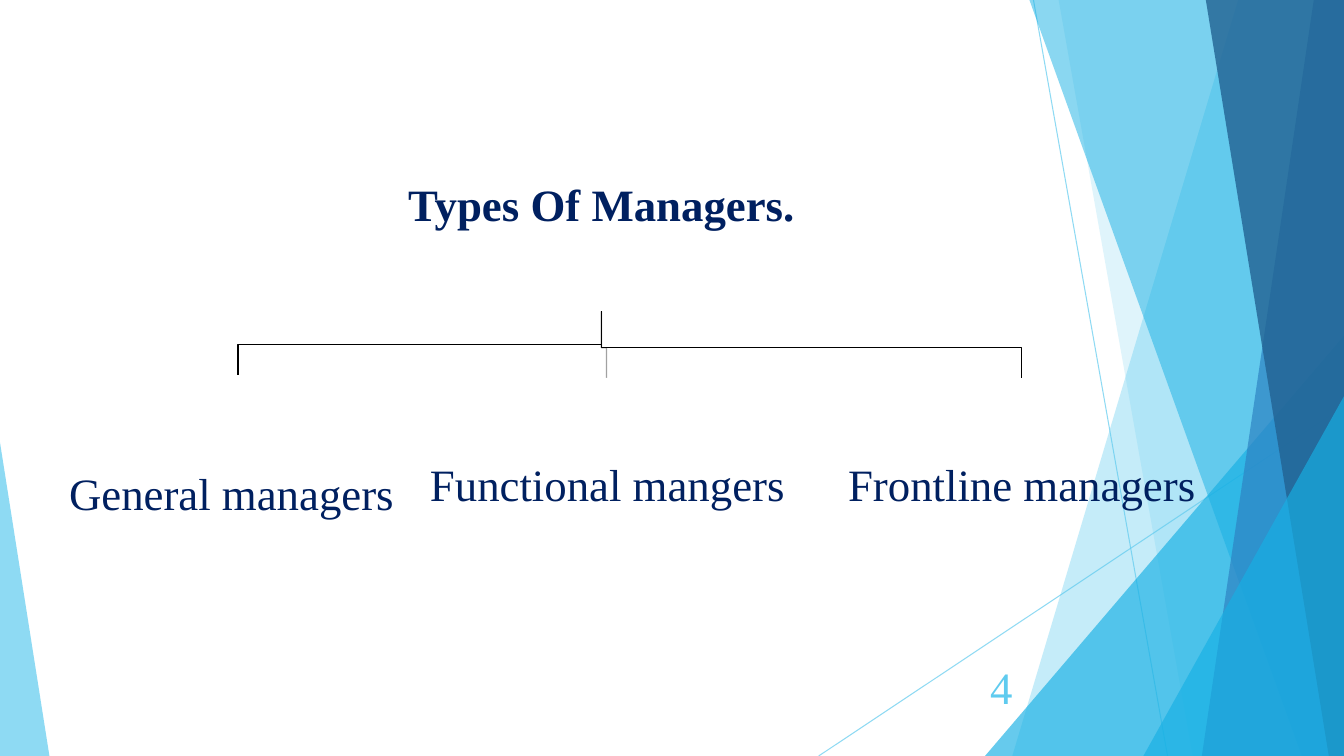
from pptx import Presentation
from pptx.dml.color import RGBColor
from pptx.enum.shapes import MSO_CONNECTOR as Conn, MSO_SHAPE as Shape
from pptx.enum.text import MSO_ANCHOR as Anchor, MSO_AUTO_SIZE as Fit, PP_ALIGN as Align
from pptx.oxml.ns import qn
from pptx.util import Inches, Pt
from lxml.etree import SubElement

WIDE, HIGH = 13.33, 7.5
NAVY, SKY, CYAN = "002060", "5FCBEF", "17B0E4"


def paint(form, hue, alpha=100):
    """Give a fill or line format a solid colour with an opacity."""
    form.solid()
    form.fore_color.rgb = RGBColor.from_string(hue)
    if alpha < 100:
        node = form._xPr.find(qn("a:solidFill"))[0]
        SubElement(node, qn("a:alpha")).set("val", str(alpha * 1000))


def write(shape, text, size=32, hue=NAVY, bold=False, align=Align.CENTER,
          anchor=Anchor.MIDDLE, inset=0.02, top=0.02, space=0.9, dot=0):
    """Set the text of a shape and its format."""
    frame = shape.text_frame
    frame.word_wrap, frame.auto_size = True, Fit.NONE
    frame.vertical_anchor = anchor
    frame.margin_left = frame.margin_right = Inches(inset)
    frame.margin_top, frame.margin_bottom = Inches(top), Inches(0.02)
    para = frame.paragraphs[0]
    para.alignment, para.line_spacing = align, space
    para.space_before = Pt(0)
    parts = [(text, size)] + ([(".", dot)] if dot else [])
    for words, points in parts:
        run = para.add_run()
        run.text = words
        font = run.font
        font.name, font.size, font.bold = "Times New Roman", Pt(points), bold
        font.color.rgb = RGBColor.from_string(hue)


def place(shape, left, top, width, height):
    """Move a shape to a box given in inches."""
    shape.left, shape.top = Inches(left), Inches(top)
    shape.width, shape.height = Inches(width), Inches(height)


def trace(slide, points, close):
    """Draw an outline through points given in inches."""
    spots = [(Inches(x), Inches(y)) for x, y in points]
    pen = slide.shapes.build_freeform(*spots[0])
    pen.add_line_segments(spots[1:], close=close)
    shape = pen.convert_to_shape()
    shape.shadow.inherit = False
    return shape


def facet(slide, head, foot, hue, alpha):
    """Draw a full-height panel from a slanted edge to the right side."""
    panel = trace(slide, [(head, 0), (WIDE, 0), (WIDE, HIGH), (foot, HIGH)], True)
    paint(panel.fill, hue, alpha)
    panel.line.fill.background()


def wedge(slide, left, top, width, tip, hue, alpha):
    """Draw a right triangle standing on the foot of the slide."""
    shape = slide.shapes.add_shape(
        Shape.ISOSCELES_TRIANGLE, Inches(left), Inches(top),
        Inches(width), Inches(HIGH - top))
    shape.adjustments[0] = tip
    shape.shadow.inherit = False
    paint(shape.fill, hue, alpha)
    shape.line.fill.background()


def ray(slide, *ends):
    """Draw a thin line of the backdrop."""
    line = slide.shapes.add_connector(Conn.STRAIGHT, *map(Inches, ends))
    paint(line.line.fill, SKY, 70)
    line.line.width = Pt(0.75)
    SubElement(line._element.spPr, qn("a:effectLst"))


def backdrop(slide):
    """Draw the facets around the slide."""
    ray(slide, 10.25, 0, 11.58, HIGH)
    ray(slide, WIDE, 4.03, 8.12, HIGH)
    facet(slide, 12.28, 10.04, SKY, 36)
    facet(slide, 10.5, 11.83, SKY, 20)
    wedge(slide, 9.77, 3.33, 3.56, 1, CYAN, 66)
    facet(slide, 10.21, 12.91, CYAN, 50)
    facet(slide, 13.03, 11.92, "2E83C3", 70)
    facet(slide, 11.96, 13.18, "226292", 80)
    wedge(slide, 11.34, 3.93, 1.99, 1, CYAN, 66)
    wedge(slide, 0, 4.39, 0.49, 0, SKY, 70)


def branch(slide, start, bend, end, alpha=100):
    """Draw a stepped line from the root down to one kind."""
    (x, y), (to, low) = start, end
    line = trace(slide, [(x, y), (x, bend), (to, bend), (to, low)], False)
    line.fill.background()
    paint(line.line.fill, "000000", alpha)
    line.line.width = Pt(1)


def kind(slide, text, box, fill=None, **form):
    """Add the box of one kind of manager."""
    shape = slide.shapes.add_shape(Shape.RECTANGLE, 0, 0, 0, 0)
    place(shape, *box)
    shape.shadow.inherit = False
    shape.line.fill.background()
    if fill:
        paint(shape.fill, fill)
    else:
        shape.fill.background()
    write(shape, text, **form)


def tree(slide, left, top, width, height):
    """Draw the title and the three kinds below it."""
    title = slide.shapes.title
    place(title, left, top, width, height)
    write(title, "Types Of Managers.", bold=True, anchor=Anchor.TOP, top=0.15)
    mid, low = left + width / 2, top + height
    root = (mid, low - 0.01)
    branch(slide, root, low + 0.35, (10.13, low + 0.65))
    branch(slide, root, low + 0.35, (mid + 0.05, low + 0.65), 36)
    branch(slide, root, low + 0.32, (2.36, low + 0.62))
    kind(slide, "General managers", (0.54, low + 0.62, 3.64, 2.36), dot=36)
    kind(slide, "Functional mangers", (3.93, low + 0.65, 4.19, 2.17), "FFFFFF")
    kind(slide, "Frontline managers", (8.31, low + 0.65, 3.65, 2.1), space=1)


def number(slide, *box):
    """Add the slide number."""
    shape = slide.shapes.add_textbox(*map(Inches, box))
    write(shape, "4", hue=SKY, align=Align.RIGHT, inset=0.1, space=1)


def main():
    """Build and save the slide."""
    deck = Presentation()
    deck.slide_width, deck.slide_height = Inches(WIDE), Inches(HIGH)
    slide = deck.slides.add_slide(deck.slide_layouts[5])
    backdrop(slide)
    tree(slide, 2.66, 1.66, 6.61, 1.44)
    number(slide, 9.39, 6.61, 0.75, 0.4)
    deck.save("out.pptx")


if __name__ == "__main__":
    main()
